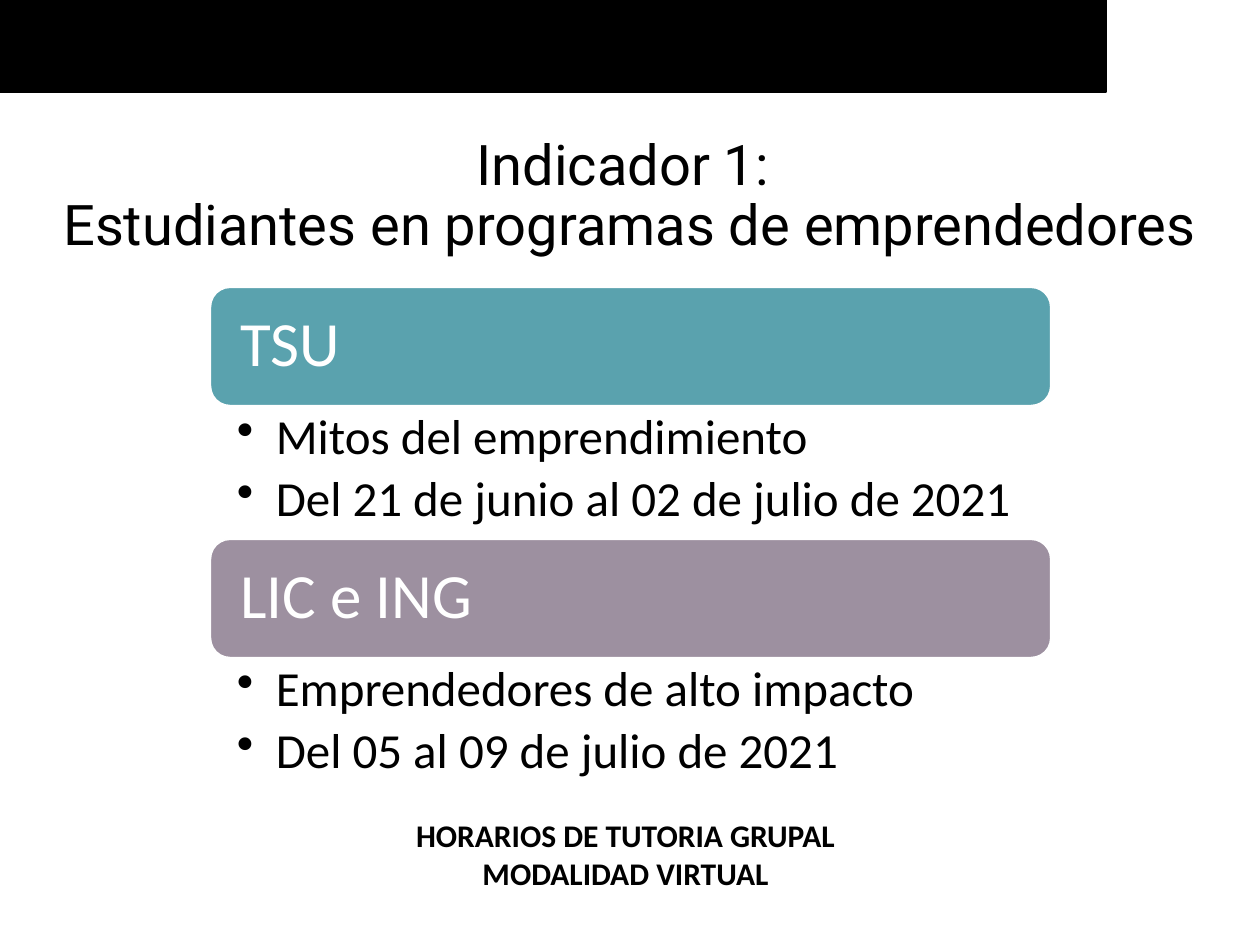
import pptx
import pptx.dml.color
import pptx.enum.shapes
import pptx.enum.text
import pptx.oxml
import pptx.oxml.ns
import pptx.util

Inches, Pt = pptx.util.Inches, pptx.util.Pt
RGB = pptx.dml.color.RGBColor.from_string
SHAPE = pptx.enum.shapes.MSO_SHAPE
ALIGN = pptx.enum.text.PP_ALIGN
ANCHOR = pptx.enum.text.MSO_ANCHOR

COLORS = {"black": "000000", "white": "FFFFFF", "teal": "5AA2AE", "mauve": "9D90A0"}

prs = pptx.Presentation()
prs.slide_width, prs.slide_height = Inches(10), Inches(7.5)
s = prs.slides.add_slide(prs.slide_layouts[6])


def add_block(kind, at, fill=None, line=None):
    """Add a preset shape, or a text box when kind is None."""
    box = [Inches(v) for v in at]
    if kind is None:
        return s.shapes.add_textbox(*box)
    sp = s.shapes.add_shape(kind, *box)
    sp.shadow.inherit = False
    sp.fill.solid()
    sp.fill.fore_color.rgb = RGB(COLORS[fill])
    sp.line.color.rgb = RGB(COLORS[line])
    sp.line.width = Pt(1)
    return sp


def write(sp, lines, size, color="black", font="Calibri", bold=False, bullet=False,
          frame=None, para=None):
    """Write one paragraph per line; frame and para hold format values."""
    tf = sp.text_frame
    tf.word_wrap = True
    for name, value in (frame or {}).items():
        setattr(tf, name, value)
    for i, text in enumerate(lines):
        p = tf.paragraphs[0] if i == 0 else tf.add_paragraph()
        p.text = text
        if bullet:
            pPr = p._p.get_or_add_pPr()
            pPr.set("marL", str(Inches(0.31)))
            pPr.set("indent", str(-Inches(0.31)))
            pPr.append(pptx.oxml.parse_xml(
                f'<a:buChar {pptx.oxml.ns.nsdecls("a")} char="•"/>'))
        for name, value in (para or {}).items():
            setattr(p, name, value)
        for r in p.runs:
            for name, value in {"size": Pt(size), "name": font, "bold": bold}.items():
                setattr(r.font, name, value)
            r.font.color.rgb = RGB(COLORS[color])


# Top band
add_block(SHAPE.RECTANGLE, (0, 0, 8.78, 0.73), "black", "black")

# Title
sp = add_block(None, (0, 0.84, 10, 1.45))
write(sp, ["Indicador 1: \vEstudiantes en programas de emprendedores"], 32, font="Roboto",
      frame={"vertical_anchor": ANCHOR.MIDDLE},
      para={"alignment": ALIGN.CENTER, "line_spacing": 0.9})

# Levels: coloured heading with its bullets below
levels = [
    ("TSU", "teal", ["Mitos del emprendimiento", "Del 21 de junio al 02 de julio de 2021"]),
    ("LIC e ING", "mauve", ["Emprendedores de alto impacto", "Del 05 al 09 de julio de 2021"]),
]
left, top, width, head_h, list_h = 1.67, 2.28, 6.67, 0.94, 1.06
heading_frame = {"vertical_anchor": ANCHOR.MIDDLE, "margin_left": Inches(0.19),
                 "margin_right": Inches(0.19)}
list_frame = {"margin_left": Inches(0.21), "margin_right": Inches(0.28)}
for i, (heading, color, items) in enumerate(levels):
    y = top + i * (head_h + list_h)
    sp = add_block(SHAPE.ROUNDED_RECTANGLE, (left, y, width, head_h), color, "white")
    write(sp, [heading], 36, "white", frame=heading_frame,
          para={"alignment": ALIGN.LEFT, "line_spacing": 0.9})
    sp = add_block(None, (left, y + head_h, width, list_h))
    write(sp, items, 28, bullet=True, frame=list_frame,
          para={"line_spacing": 0.9, "space_after": Pt(5.6)})

# Footer
sp = add_block(None, (0.75, 6.43, 8.43, 0.71))
write(sp, ["HORARIOS DE TUTORIA GRUPAL", "MODALIDAD VIRTUAL"], 18, bold=True,
      para={"alignment": ALIGN.CENTER})

prs.save("out.pptx")
